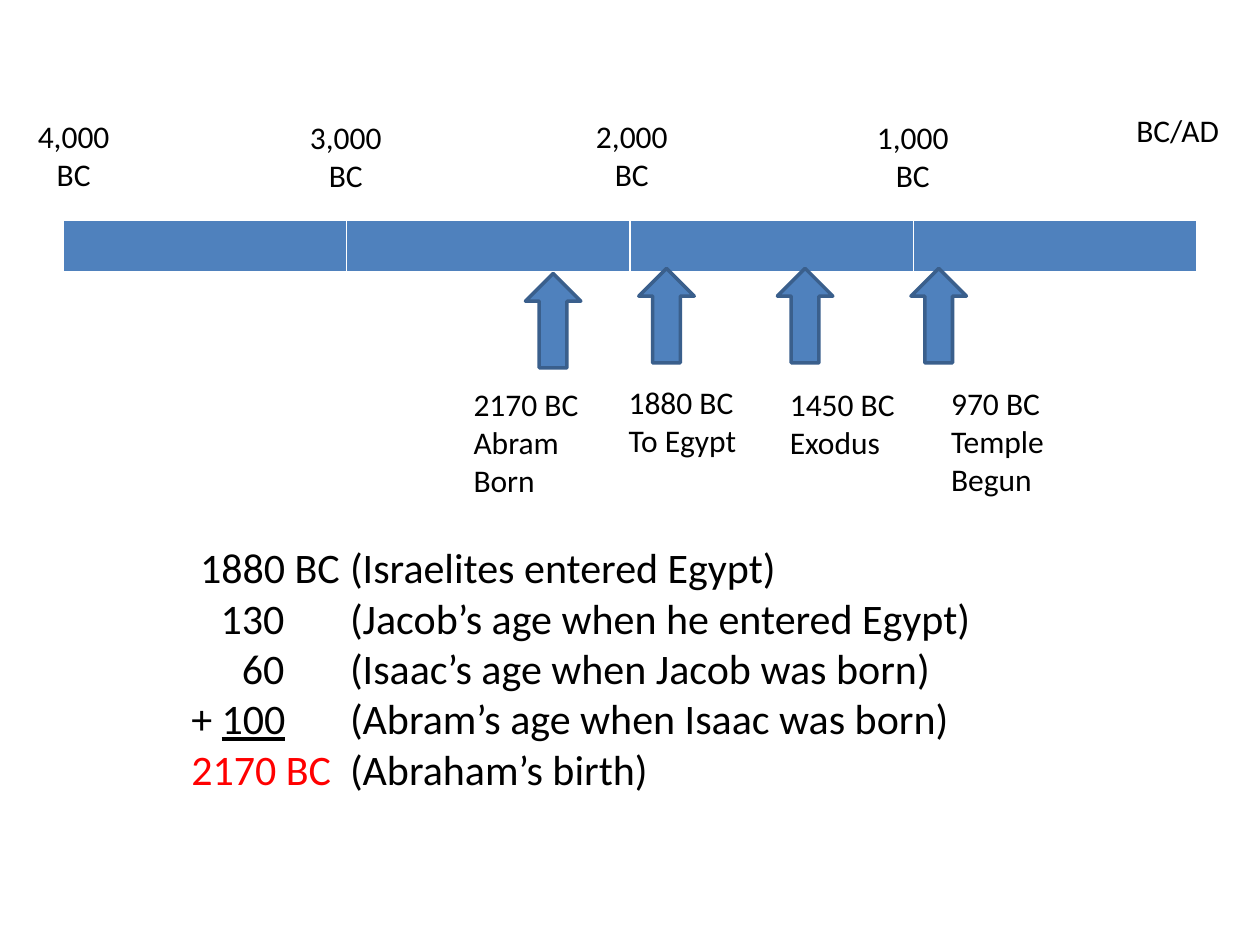
"""Build a Bible timeline slide with dated events and the sum behind Abram's birth."""
from typing import NamedTuple

from lxml.etree import SubElement
from pptx import Presentation
from pptx.dml.color import RGBColor
from pptx.enum.shapes import MSO_SHAPE as Shape
from pptx.enum.text import MSO_AUTO_SIZE as AutoSize, PP_ALIGN as Align
from pptx.oxml.ns import qn
from pptx.util import Inches, Pt

FONT = "Calibri"
BLACK, RED, BLUE, NAVY = "000000", "FF0000", "4F81BD", "3A5F8C"
DESCRIPTION_TAB = 1.26


class Run(NamedTuple):
    text: str
    color: str = BLACK
    underline: bool = False


class Label(NamedTuple):
    left: float
    top: float
    width: float
    height: float
    lines: tuple[str, ...]
    align: Align = Align.LEFT


class Arrow(NamedTuple):
    left: float
    top: float


class SumLine(NamedTuple):
    runs: tuple[Run, ...]
    number_tab: float | None = None


MILLENNIA = [
    Label(left, top, 0.83, 0.71, (year, "BC"), Align.CENTER)
    for left, top, year in (
        (0.17, 0.88, "4,000"),
        (2.33, 0.89, "3,000"),
        (4.6, 0.88, "2,000"),
        (6.83, 0.89, "1,000"),
    )
]
ERA = Label(8.92, 0.83, 0.92, 0.4, ("BC/AD",))
EVENTS = [
    Label(3.66, 3.01, 1.22, 1.01, ("2170 BC", "Abram", "Born")),
    Label(4.89, 2.99, 1.25, 0.71, ("1880 BC", "To Egypt")),
    Label(6.17, 3.01, 1.08, 0.71, ("1450 BC", "Exodus")),
    Label(7.45, 3, 1.25, 1.01, ("970 BC", "Temple", "Begun")),
]
ARROWS = [Arrow(4.17, 2.17), Arrow(5.07, 2.13), Arrow(6.17, 2.13), Arrow(7.23, 2.13)]
SUM_LINES = [
    SumLine((Run("\t1880 BC\t(Israelites entered Egypt)"),), 1.18),
    SumLine((Run("\t130\t(Jacob’s age when he entered Egypt)"),), 0.74),
    SumLine((Run("\t60\t(Isaac’s age when Jacob was born)"),), 0.74),
    SumLine((Run("+ "), Run("100", underline=True), Run("\t(Abram’s age when Isaac was born)"))),
    SumLine((Run("2170 BC", RED), Run("\t(Abraham’s birth)"))),
]


def rgb(color: str) -> RGBColor:
    return RGBColor.from_string(color)


def add_run(paragraph, run: Run, size: float) -> None:
    text_run = paragraph.add_run()
    text_run.text = run.text
    font = text_run.font
    font.name, font.size = FONT, Pt(size)
    font.color.rgb = rgb(run.color)
    if run.underline:
        font.underline = True


def add_text_frame(slide, left: float, top: float, width: float, height: float):
    box = slide.shapes.add_textbox(Inches(left), Inches(top), Inches(width), Inches(height))
    frame = box.text_frame
    frame.word_wrap = True
    frame.auto_size = AutoSize.SHAPE_TO_FIT_TEXT
    return frame


def next_paragraph(frame, index: int):
    return frame.add_paragraph() if index else frame.paragraphs[0]


def add_label(slide, label: Label) -> None:
    frame = add_text_frame(slide, label.left, label.top, label.width, label.height)
    for index, line in enumerate(label.lines):
        paragraph = next_paragraph(frame, index)
        paragraph.alignment = label.align
        add_run(paragraph, Run(line), 18)


def add_tabs(paragraph, number_tab: float | None) -> None:
    tabs = SubElement(paragraph._p.get_or_add_pPr(), qn("a:tabLst"))
    stops = [(number_tab, "r")] if number_tab else []
    for position, align in [*stops, (DESCRIPTION_TAB, "l")]:
        SubElement(tabs, qn("a:tab"), pos=str(Inches(position)), algn=align)


def add_sum(slide) -> None:
    frame = add_text_frame(slide, 1.42, 4.25, 7.67, 2.12)
    for index, line in enumerate(SUM_LINES):
        paragraph = next_paragraph(frame, index)
        add_tabs(paragraph, line.number_tab)
        for run in line.runs:
            add_run(paragraph, run, 24)


def add_arrow(slide, arrow: Arrow) -> None:
    shape = slide.shapes.add_shape(
        Shape.UP_ARROW, Inches(arrow.left), Inches(arrow.top), Inches(0.44), Inches(0.75)
    )
    shape.shadow.inherit = False
    shape.fill.solid()
    shape.fill.fore_color.rgb = rgb(BLUE)
    shape.line.color.rgb = rgb(NAVY)
    shape.line.width = Pt(2)


def add_timeline(slide) -> None:
    frame = slide.shapes.add_table(1, 4, Inches(0.5), Inches(1.75), Inches(9), Inches(0.41))
    for cell in frame.table.iter_cells():
        cell.fill.solid()
        cell.fill.fore_color.rgb = rgb(BLUE)


def main() -> None:
    presentation = Presentation()
    presentation.slide_width, presentation.slide_height = Inches(10), Inches(7.5)
    slide = presentation.slides.add_slide(presentation.slide_layouts[6])
    add_timeline(slide)
    for label in [*MILLENNIA, ERA, *EVENTS]:
        add_label(slide, label)
    for arrow in ARROWS:
        add_arrow(slide, arrow)
    add_sum(slide)
    presentation.save("out.pptx")


if __name__ == "__main__":
    main()
